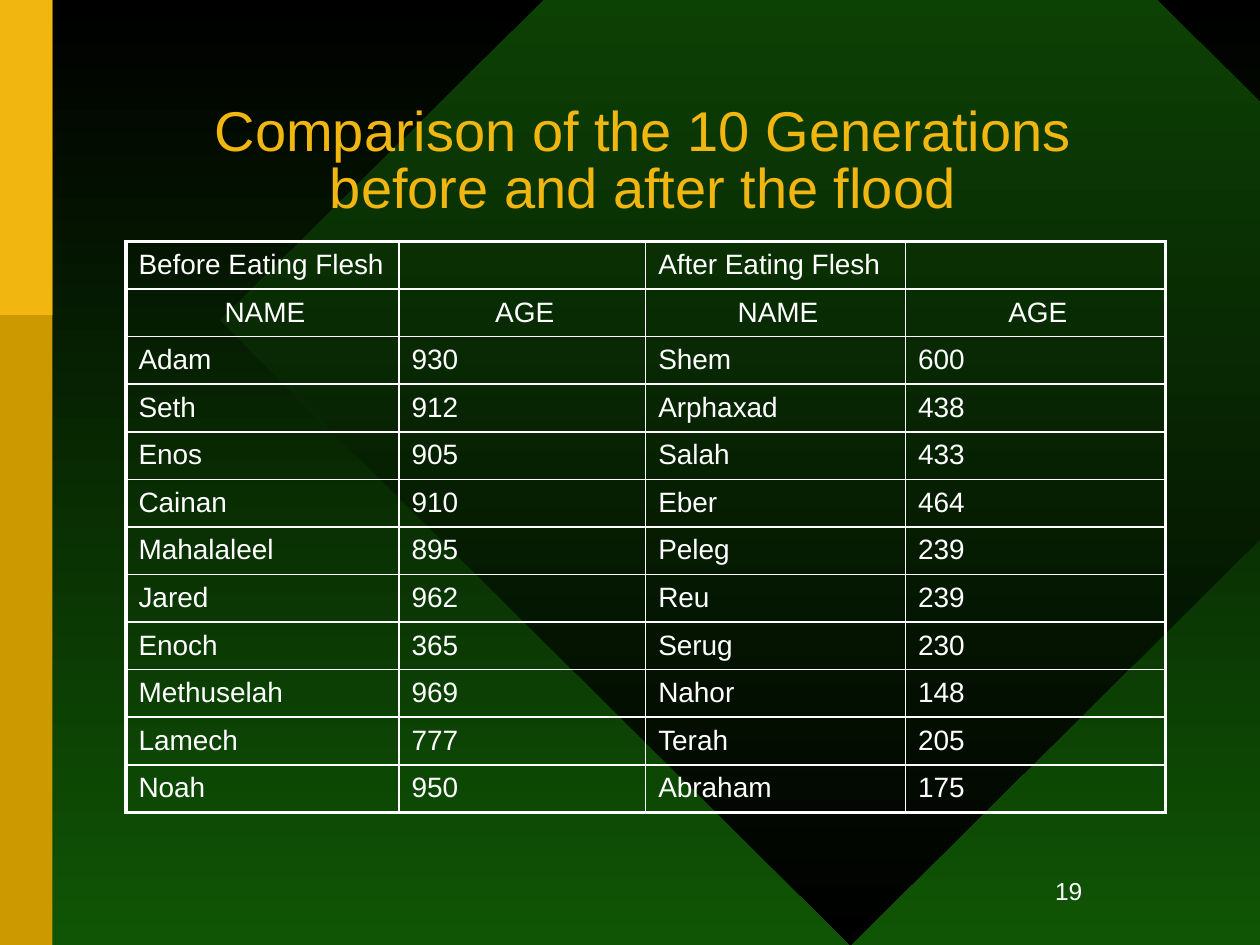
from lxml.etree import SubElement
from pptx import Presentation
from pptx.dml.color import RGBColor
from pptx.enum.shapes import MSO_SHAPE
from pptx.enum.text import MSO_ANCHOR, MSO_AUTO_SIZE, PP_ALIGN
from pptx.oxml.ns import qn
from pptx.util import Pt

WHITE, GOLD, OCHRE = "FFFFFF", "F1B60F", "CC9900"
BEFORE = [("Adam", 930), ("Seth", 912), ("Enos", 905), ("Cainan", 910),
          ("Mahalaleel", 895), ("Jared", 962), ("Enoch", 365),
          ("Methuselah", 969), ("Lamech", 777), ("Noah", 950)]
AFTER = [("Shem", 600), ("Arphaxad", 438), ("Salah", 433), ("Eber", 464),
         ("Peleg", 239), ("Reu", 239), ("Serug", 230),
         ("Nahor", 148), ("Terah", 205), ("Abraham", 175)]


def paint(color, code):
    color.rgb = RGBColor.from_string(code)


def blend(fill, top, bottom):
    fill.gradient()
    fill.gradient_angle = 270
    for stop, code in zip(fill.gradient_stops, (top, bottom)):
        paint(stop.color, code)


def write(para, text, size, code, align=None, indent=0):
    para.alignment = align
    if indent:
        para._p.get_or_add_pPr().set("marL", str(Pt(indent)))
    run = para.add_run()
    run.text = text
    run.font.name = "Arial"
    run.font.size = Pt(size)
    paint(run.font.color, code)


def inset(frame, right):
    frame.margin_left = frame.margin_top = frame.margin_bottom = Pt(4.5)
    frame.margin_right = Pt(right)


def shape(slide, kind, box):
    item = slide.shapes.add_shape(kind, *map(Pt, box))
    item.shadow.inherit = False
    item.line.fill.background()
    return item


def backdrop(slide, box):
    blend(slide.background.fill, "000000", "105505")
    gem = shape(slide, MSO_SHAPE.DIAMOND, box)
    blend(gem.fill, "115606", "000000")


def sidebar(slide, box):
    left, top, width, height = box
    for part, code in ((height, OCHRE), (height / 3, GOLD)):
        bar = shape(slide, MSO_SHAPE.RECTANGLE, (left, top, width, part))
        bar.fill.solid()
        paint(bar.fill.fore_color, code)


def heading(slide, box, text):
    title = slide.shapes.title
    title.element.getparent().append(title.element)
    title.left, title.top, title.width, title.height = map(Pt, box)
    frame = title.text_frame
    frame.auto_size = MSO_AUTO_SIZE.NONE
    frame.word_wrap = True
    frame.vertical_anchor = MSO_ANCHOR.MIDDLE
    inset(frame, 10)
    para = frame.paragraphs[0]
    para.line_spacing = 0.85
    write(para, text, 32, GOLD, PP_ALIGN.CENTER, 2.7)


def number(slide, box, text):
    frame = slide.shapes.add_textbox(*map(Pt, box)).text_frame
    frame.word_wrap = False
    frame.vertical_anchor = MSO_ANCHOR.BOTTOM
    inset(frame, 7.2)
    write(frame.paragraphs[0], text, 14, WHITE, PP_ALIGN.CENTER)


def border(cell, outer):
    props = cell._tc.get_or_add_tcPr()
    for side, edge in zip("LRTB", outer):
        line = SubElement(props, qn(f"a:ln{side}"), w=str(Pt(2.25 if edge else 1)))
        fill = SubElement(line, qn("a:solidFill"))
        SubElement(fill, qn("a:srgbClr"), val=WHITE)


def ages(slide, box, widths, rows):
    grid = slide.shapes.add_table(len(rows), len(widths), *map(Pt, box)).table
    grid.first_row = grid.horz_banding = False
    for col, width in zip(grid.columns, widths):
        col.width = Pt(width)
    last, end = len(rows) - 1, len(widths) - 1
    for r, row in enumerate(rows):
        grid.rows[r].height = Pt(box[3] / len(rows))
        for c, value in enumerate(row):
            cell = grid.cell(r, c)
            border(cell, (c == 0, c == end, r == 0, r == last))
            cell.fill.background()
            inset(cell, 4.5)
            if value == "":
                cell.margin_top = cell.margin_bottom = 0
                continue
            align = PP_ALIGN.CENTER if r == 1 else PP_ALIGN.LEFT
            write(cell.text_frame.paragraphs[0], str(value), 16, WHITE, align, 2.7)


def main():
    deck = Presentation()
    deck.slide_width, deck.slide_height = Pt(720), Pt(540)
    slide = deck.slides.add_slide(deck.slide_layouts[5])
    backdrop(slide, (126, -173.5, 720, 713.5))
    sidebar(slide, (0, 0, 30, 540))
    number(slide, (597, 498, 30, 24), "19")
    heading(slide, (72, 6, 594, 174),
            "Comparison of the 10 Generations before and after the flood")
    rows = [("Before Eating Flesh", "", "After Eating Flesh", ""),
            ("NAME", "AGE") * 2]
    rows += [old + new for old, new in zip(BEFORE, AFTER)]
    ages(slide, (72, 138, 594, 326.4), (156, 141, 148.5, 148.5), rows)
    deck.save("out.pptx")


if __name__ == "__main__":
    main()
